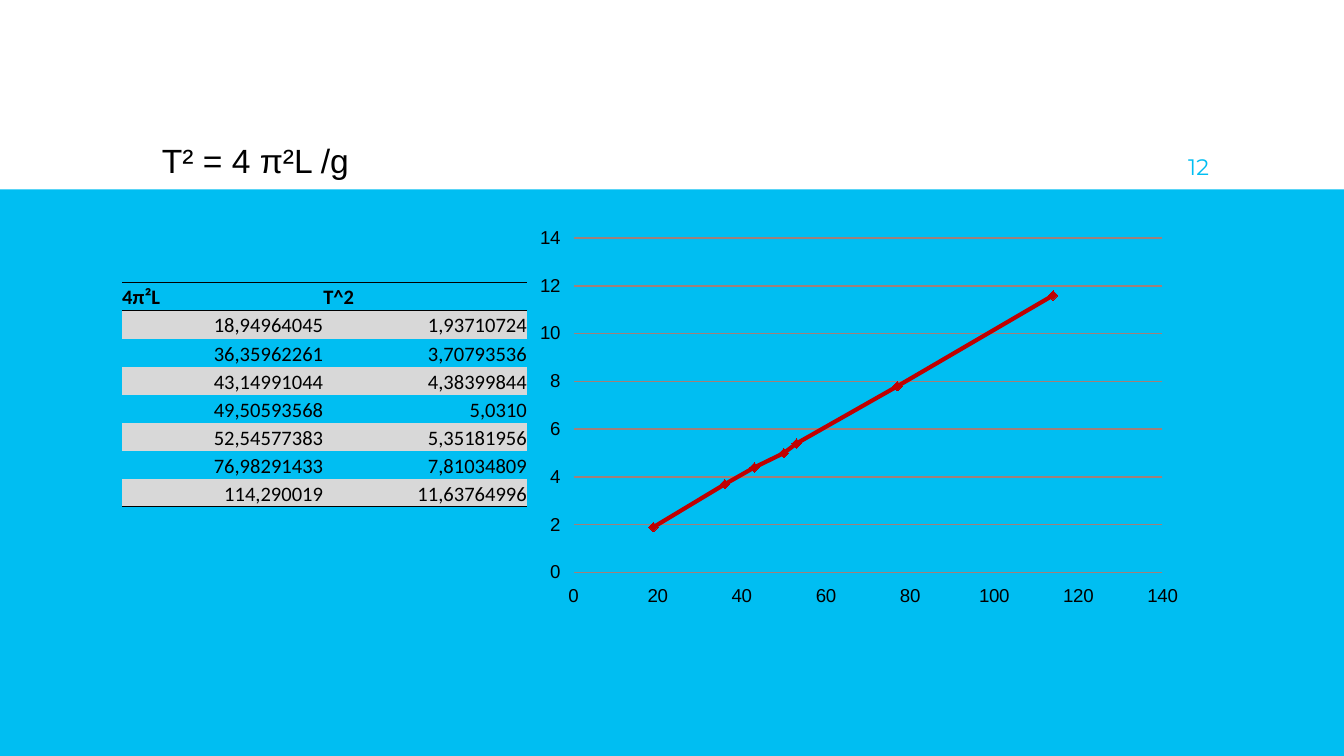
from lxml import etree
from pptx import Presentation
from pptx.chart.data import XyChartData
from pptx.dml.color import RGBColor
from pptx.enum.chart import XL_CHART_TYPE, XL_MARKER_STYLE, XL_TICK_MARK
from pptx.enum.shapes import MSO_SHAPE
from pptx.enum.text import MSO_ANCHOR, MSO_AUTO_SIZE, PP_ALIGN
from pptx.oxml import parse_xml
from pptx.oxml.ns import nsdecls, qn
from pptx.util import Cm, Pt

LEFT, RIGHT = PP_ALIGN.LEFT, PP_ALIGN.RIGHT
BOTTOM = MSO_ANCHOR.BOTTOM
NO_AUTOFIT = MSO_AUTO_SIZE.NONE
RECTANGLE = MSO_SHAPE.RECTANGLE
SCATTER = XL_CHART_TYPE.XY_SCATTER_SMOOTH
DIAMOND = XL_MARKER_STYLE.DIAMOND
TICK_CROSS = XL_TICK_MARK.CROSS
TITLE_ONLY = 5
PLAIN_TABLE_STYLE = "{2D5ABB26-0587-4C30-8999-92F81FD0307C}"

HEADINGS = ("4π²L", "T^2")
MEASUREMENTS = [
    ("18,94964045", "1,93710724"),
    ("36,35962261", "3,70793536"),
    ("43,14991044", "4,38399844"),
    ("49,50593568", "5,0310"),
    ("52,54577383", "5,35181956"),
    ("76,98291433", "7,81034809"),
    ("114,290019", "11,63764996"),
]


def rgb(value):
    return RGBColor.from_string(value)


def number(text, digits):
    """Read a number written with a decimal comma, rounded."""
    return round(float(text.replace(",", ".")), digits)


def write(frame, text, font="Arial", size=11, color="000000", bold=False, align=LEFT):
    paragraph = frame.paragraphs[0]
    paragraph.alignment = align
    run = paragraph.add_run()
    run.text = text
    run.font.name = font
    run.font.size = Pt(size)
    run.font.bold = bold
    run.font.color.rgb = rgb(color)


def set_border(cell, side):
    """Draw a thin black line on the side "T" or "B" of a cell."""
    cell._tc.get_or_add_tcPr().append(parse_xml(
        f'<a:ln{side} {nsdecls("a")} w="6350"><a:solidFill>'
        f'<a:srgbClr val="000000"/></a:solidFill></a:ln{side}>'))


def place_plot(chart, **fractions):
    """Fix the inner plot area, in fractions of the chart."""
    plot_area = chart._chartSpace.chart.plotArea
    for old in plot_area.findall(qn("c:layout")):
        plot_area.remove(old)
    layout = etree.Element(qn("c:layout"))
    manual = etree.SubElement(layout, qn("c:manualLayout"))
    settings = {"layoutTarget": "inner", "xMode": "edge", "yMode": "edge", **fractions}
    for tag, value in settings.items():
        etree.SubElement(manual, qn(f"c:{tag}")).set("val", str(value))
    plot_area.insert(0, layout)


class SlideBuilder:
    blue = "00BEF2"
    stripe = "D8D8D8"
    red = "C00000"
    grid = "A0807A"

    def __init__(self, slide):
        self.slide = slide

    def band(self, left, top, width, height):
        band = self.slide.shapes.add_shape(
            RECTANGLE, Cm(left), Cm(top), Cm(width), Cm(height))
        band.shadow.inherit = False
        band.fill.solid()
        band.fill.fore_color.rgb = rgb(self.blue)
        band.line.fill.background()

    def fill_text(self, holder, text, **style):
        frame = holder.text_frame
        frame.word_wrap = True
        frame.auto_size = NO_AUTOFIT
        frame.vertical_anchor = BOTTOM
        frame.margin_left = frame.margin_right = Cm(0.25)
        frame.margin_top = frame.margin_bottom = Cm(0.25)
        write(frame, text, **style)

    def title(self, text, left, top, width, height):
        title = self.slide.shapes.title
        title.left, title.top = Cm(left), Cm(top)
        title.width, title.height = Cm(width), Cm(height)
        self.fill_text(title, text, size=18)

    def page_number(self, text, left, top, width, height):
        box = self.slide.shapes.add_textbox(Cm(left), Cm(top), Cm(width), Cm(height))
        self.fill_text(box, text, font="Montserrat", size=12, color=self.blue, align=RIGHT)

    def table(self, headings, records, left, top, column_widths, row_height):
        rows = [headings, *records]
        frame = self.slide.shapes.add_table(
            len(rows), len(headings), Cm(left), Cm(top),
            Cm(sum(column_widths)), Cm(row_height * len(rows)))
        table = frame.table
        table.horz_banding = False
        table._tbl.tblPr.find(qn("a:tableStyleId")).text = PLAIN_TABLE_STYLE
        for column, width in zip(table.columns, column_widths):
            column.width = Cm(width)
        for r, record in enumerate(rows):
            table.rows[r].height = Cm(row_height)
            for c, text in enumerate(record):
                self.cell(table.cell(r, c), text, r, len(rows) - 1)

    def cell(self, cell, text, row, last_row):
        is_heading = row == 0
        cell.margin_left = cell.margin_right = 0
        cell.margin_top = cell.margin_bottom = 0
        cell.vertical_anchor = BOTTOM
        if is_heading:
            set_border(cell, "T")
        if row in (0, last_row):
            set_border(cell, "B")
        if row % 2:
            cell.fill.solid()
            cell.fill.fore_color.rgb = rgb(self.stripe)
        else:
            cell.fill.background()
        write(cell.text_frame, text, font="Calibri", bold=is_heading,
              align=LEFT if is_heading else RIGHT)

    def scatter(self, points, left, top, width, height):
        data = XyChartData()
        series_data = data.add_series("Series 1")
        for x, y in points:
            series_data.add_data_point(x, y)
        chart = self.slide.shapes.add_chart(
            SCATTER, Cm(left), Cm(top), Cm(width), Cm(height), data).chart
        chart.has_legend = False
        chart.has_title = False
        chart.font.name = "Arial"
        chart.font.size = Pt(10)
        chart.font.color.rgb = rgb("000000")
        chart.plots[0].vary_by_categories = False
        self.axis(chart.category_axis, 140, 20)
        self.axis(chart.value_axis, 14, 2)
        chart.value_axis.has_major_gridlines = True
        grid_line = chart.value_axis.major_gridlines.format.line
        grid_line.color.rgb = rgb(self.grid)
        grid_line.width = Pt(0.75)
        place_plot(chart, x=0.06, y=0.05, w=0.88, h=0.83)

        series = chart.plots[0].series[0]
        series.smooth = True
        series.format.line.color.rgb = rgb(self.red)
        series.format.line.width = Pt(2.25)
        series.marker.style = DIAMOND
        series.marker.size = 5
        series.marker.format.fill.solid()
        series.marker.format.fill.fore_color.rgb = rgb(self.red)
        series.marker.format.line.color.rgb = rgb(self.red)

    def axis(self, axis, maximum, step):
        axis.minimum_scale, axis.maximum_scale = 0, maximum
        axis.major_unit = step
        axis.has_major_gridlines = False
        axis.major_tick_mark = TICK_CROSS
        axis.tick_labels.number_format = "0"
        axis.tick_labels.number_format_is_linked = False
        axis.format.line.fill.background()


def main():
    presentation = Presentation()
    presentation.slide_width, presentation.slide_height = Cm(25.4), Cm(14.29)
    builder = SlideBuilder(
        presentation.slides.add_slide(presentation.slide_layouts[TITLE_ONLY]))
    builder.band(0, 3.58, 25.4, 10.71)
    builder.page_number("12", 21.58, 1.81, 1.52, 1.85)
    points = [(number(x, 0), number(y, 1)) for x, y in MEASUREMENTS]
    builder.scatter(points, 10.08, 4.12, 12.65, 7.62)
    builder.table(HEADINGS, MEASUREMENTS, 2.31, 5.34, (3.8, 3.85), 0.53)
    builder.title("T² = 4 π²L /g", 2.81, 1.8, 19.8, 1.85)
    presentation.save("out.pptx")


if __name__ == "__main__":
    main()
